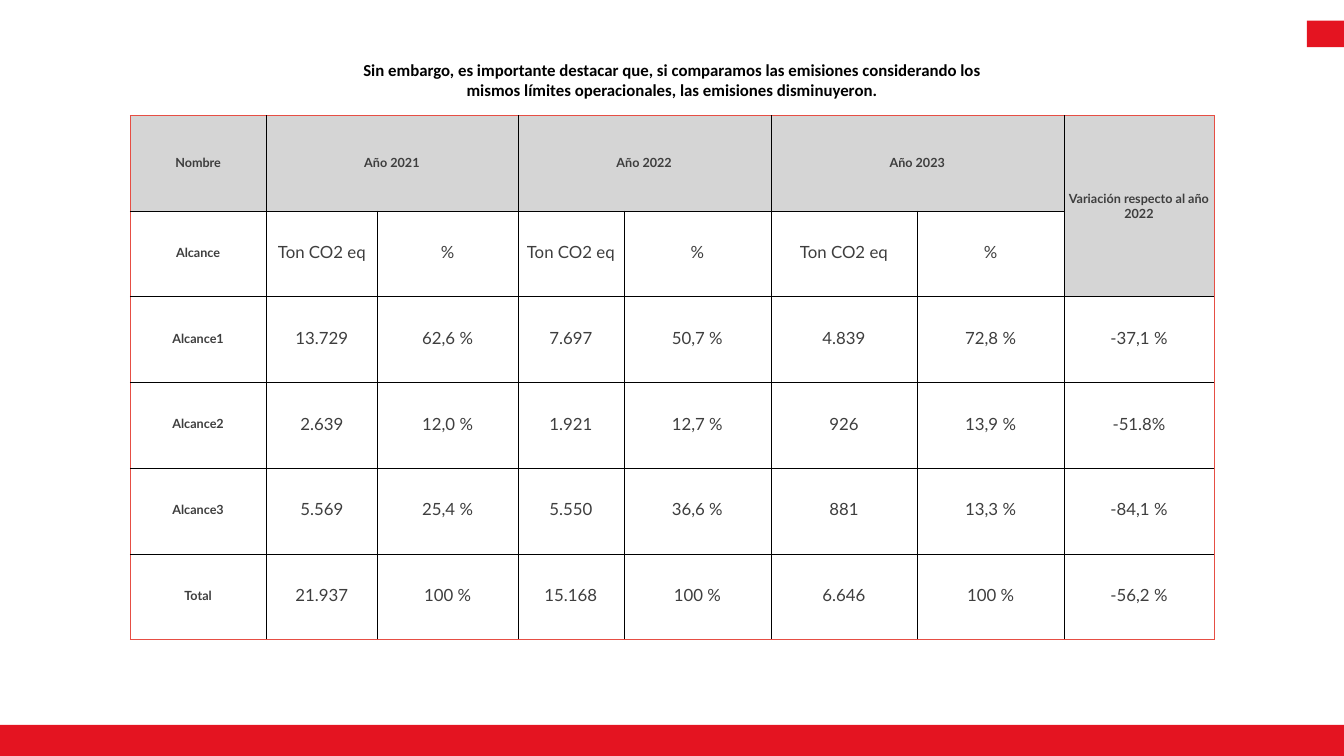
from pptx import Presentation
from pptx.dml.color import RGBColor
from pptx.enum.shapes import MSO_SHAPE as Shape
from pptx.enum.text import MSO_ANCHOR as Anchor, MSO_AUTO_SIZE as AutoSize, PP_ALIGN as Align
from pptx.oxml.ns import qn
from pptx.util import Pt
from lxml.etree import SubElement

RED, EDGE, BLACK, GREY, TEXT = "E41421", "E64E44", "000000", "D5D5D5", "3E3E3E"
HEADING = ("Sin embargo, es importante destacar que, si comparamos las emisiones "
           "considerando los mismos límites operacionales, las emisiones disminuyeron.")

COLUMN_WIDTHS = [194.4, 159.1, 200.2, 151.9, 209.5, 209.5, 209.5, 214.6]
ROW_HEIGHTS = [136.1] + [122.6] * 5
ROWS = [
    ["Nombre", "Año 2021", "", "Año 2022", "", "Año 2023", "", "Variación respecto al año 2022"],
    ["Alcance"] + ["Ton CO2 eq", "%"] * 3 + [""],
    ["Alcance1", "13.729", "62,6 %", "7.697", "50,7 %", "4.839", "72,8 %", "-37,1 %"],
    ["Alcance2", "2.639", "12,0 %", "1.921", "12,7 %", "926", "13,9 %", "-51.8%"],
    ["Alcance3", "5.569", "25,4 %", "5.550", "36,6 %", "881", "13,3 %", "-84,1 %"],
    ["Total", "21.937", "100 %", "15.168", "100 %", "6.646", "100 %", "-56,2 %"],
]
# First and last cell of each merged header
MERGES = [((0, 1), (0, 2)), ((0, 3), (0, 4)), ((0, 5), (0, 6)), ((0, 7), (1, 7))]


def rgb(color):
    return RGBColor.from_string(color)


def format_paragraph(paragraph, font_name, size, color, bold, line_spacing=1.0):
    paragraph.alignment = Align.CENTER
    paragraph.line_spacing = line_spacing
    for run in paragraph.runs:
        font = run.font
        font.name, font.size, font.bold = font_name, Pt(size), bold
        font.color.rgb = rgb(color)


def add_bar(slide, left, top, width, height):
    bar = slide.shapes.add_shape(Shape.RECTANGLE, Pt(left), Pt(top), Pt(width), Pt(height))
    bar.shadow.inherit = False
    bar.fill.solid()
    bar.fill.fore_color.rgb = rgb(RED)
    bar.line.fill.background()


def add_heading(slide):
    title = slide.shapes.title
    title.left, title.top, title.width, title.height = Pt(480), Pt(82), Pt(960), Pt(65.5)
    frame = title.text_frame
    frame.text = HEADING
    frame.word_wrap = True
    frame.auto_size = AutoSize.NONE
    frame.vertical_anchor = Anchor.TOP
    format_paragraph(frame.paragraphs[0], "Calibri", 24, BLACK, True)


def set_borders(cell, row, column):
    """Red on the rim of the table, thin black inside, none within a merge."""
    on_rim = {"L": column == 0, "R": column == len(COLUMN_WIDTHS) - 1,
              "T": row == 0, "B": row == len(ROWS) - 1}
    inner_side = ("L" if row == 0 else "T") if cell.is_spanned else None
    properties = cell._tc.get_or_add_tcPr()
    for side, rim in on_rim.items():
        if side == inner_side:
            continue
        line = SubElement(properties, qn(f"a:ln{side}"), w=str(Pt(1 if rim else 0.25)))
        fill = SubElement(line, qn("a:solidFill"))
        SubElement(fill, qn("a:srgbClr"), val=EDGE if rim else BLACK)


def format_cell(cell, row, column, text):
    set_borders(cell, row, column)
    is_header = row == 0 or (row == 1 and column == 7)
    if is_header:
        cell.fill.solid()
        cell.fill.fore_color.rgb = rgb(GREY)
    else:
        cell.fill.background()
    cell.margin_left = cell.margin_right = cell.margin_top = cell.margin_bottom = Pt(4.5)
    cell.vertical_anchor = Anchor.MIDDLE
    if not text:
        return
    cell.text_frame.text = text
    is_label = is_header or column == 0
    spacing = 0.8 if row else (0.9 if column == 0 else 1.0)
    format_paragraph(cell.text_frame.paragraphs[0], "Lato", 18 if is_label else 24,
                     TEXT, is_label, spacing)


def add_emissions_table(slide):
    table = slide.shapes.add_table(
        len(ROWS), len(COLUMN_WIDTHS), Pt(185.8), Pt(164.9),
        Pt(sum(COLUMN_WIDTHS)), Pt(sum(ROW_HEIGHTS))).table
    table.first_row = table.horz_banding = False
    for column, width in zip(table.columns, COLUMN_WIDTHS):
        column.width = Pt(width)
    for row, height in zip(table.rows, ROW_HEIGHTS):
        row.height = Pt(height)
    for first, last in MERGES:
        table.cell(*first).merge(table.cell(*last))
    for row, texts in enumerate(ROWS):
        for column, text in enumerate(texts):
            format_cell(table.cell(row, column), row, column, text)


def main():
    presentation = Presentation()
    presentation.slide_width, presentation.slide_height = Pt(1920), Pt(1080)
    slide = presentation.slides.add_slide(presentation.slide_layouts[5])

    # Corner mark and footer band
    add_bar(slide, 1867, 29.5, 53, 38)
    add_bar(slide, 0, 1035.4, 1920, 44.6)

    # Content
    add_emissions_table(slide)
    add_heading(slide)
    presentation.save("out.pptx")


if __name__ == "__main__":
    main()
